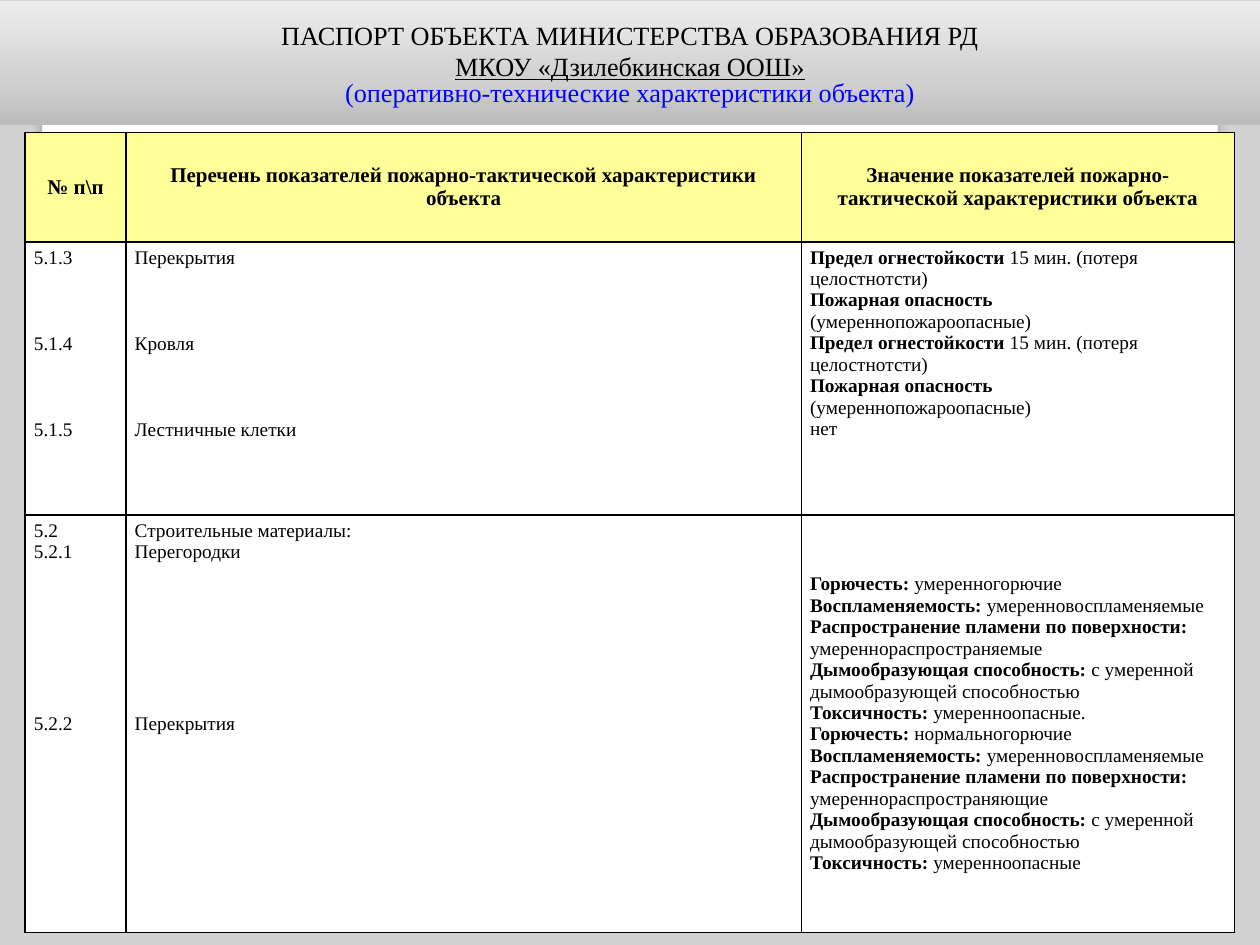
from lxml import etree
from pptx import Presentation
from pptx.dml.color import RGBColor
from pptx.enum.shapes import MSO_SHAPE
from pptx.enum.text import MSO_ANCHOR, PP_ALIGN
from pptx.oxml import parse_xml
from pptx.oxml.ns import nsdecls, qn
from pptx.util import Pt

RECTANGLE = MSO_SHAPE.RECTANGLE
ROUNDED = MSO_SHAPE.ROUNDED_RECTANGLE
MIDDLE, TOP = MSO_ANCHOR.MIDDLE, MSO_ANCHOR.TOP
CENTER, LEFT = PP_ALIGN.CENTER, PP_ALIGN.LEFT
FONT = "Times New Roman"
color = RGBColor.from_string


def fill_gradient(shape, stops, angle):
    shape.fill.gradient()
    shape.fill.gradient_angle = angle
    stop_list = shape._element.spPr.find(".//" + qn("a:gsLst"))
    for stop in list(stop_list):
        stop_list.remove(stop)
    for position, shade in stops:
        stop = etree.SubElement(stop_list, qn("a:gs"), pos=str(position * 1000))
        etree.SubElement(stop, qn("a:srgbClr"), val=shade)


def style_run(run, size, bold=False, shade="000000"):
    run.font.name = FONT
    run.font.size = Pt(size)
    run.font.bold = bold
    run.font.color.rgb = color(shade)


prs = Presentation()
prs.slide_width, prs.slide_height = Pt(720), Pt(540)
slide = prs.slides.add_slide(prs.slide_layouts[6])
slide.background.fill.solid()
slide.background.fill.fore_color.rgb = color("D2D2D2")

card = slide.shapes.add_shape(ROUNDED, Pt(24), Pt(26), Pt(672), Pt(488))
card.adjustments[0] = 0.02
fill_gradient(card, [(0, "FFFFFF"), (98, "FFFFFF"), (99, "F7F7F7"), (100, "DADADA")], 270)
card.line.color.rgb = color("A4A4A4")
card.line.width = Pt(0.16)
card._element.spPr.append(parse_xml(
    f'<a:effectLst {nsdecls("a")}><a:outerShdw blurRad="{Pt(6)}" dist="{Pt(4)}" dir="5400000">'
    '<a:srgbClr val="000000"><a:alpha val="25000"/></a:srgbClr></a:outerShdw></a:effectLst>'))

headings = ["№ п\\п",
            "Перечень показателей пожарно-тактической характеристики объекта",
            "Значение показателей пожарно-тактической характеристики объекта"]
fire_limits = [("Предел огнестойкости ", "15 мин. (потеря целостнотсти)"),
               ("Пожарная опасность", ""),
               ("", "(умереннопожароопасные)")]
materials = []
for burning, spreading, toxicity in [
        ("умеренногорючие", "умереннораспространяемые", "умеренноопасные."),
        ("нормальногорючие", "умереннораспространяющие", "умеренноопасные")]:
    materials += [("Горючесть:", " " + burning),
                  ("Воспламеняемость: ", "умеренновоспламеняемые"),
                  ("Распространение пламени по поверхности:", ""),
                  ("", spreading),
                  ("Дымообразующая способность: ", "с умеренной дымообразующей способностью"),
                  ("Токсичность:", " " + toxicity)]

rows = [
    [[(heading, "")] for heading in headings],
    [[("", number) for number in ("5.1.3", "5.1.4", "5.1.5")],
     [("", part) for part in ("Перекрытия", "Кровля", "Лестничные клетки")],
     fire_limits * 2 + [("", "нет")]],
    [[("", number) for number in ("5.2", "5.2.1", "5.2.2")],
     [("", part) for part in ("Строительные материалы:", "Перегородки", "Перекрытия")],
     materials],
]
item_gaps = [[0], [0, 36.9, 36.9], [0, 0, 86]]

table = slide.shapes.add_table(3, 3, Pt(14.4), Pt(75.6), Pt(691.2), Pt(457.2)).table
table.first_row = table.horz_banding = False
for column, width in zip(table.columns, (57.6, 385.9, 247.7)):
    column.width = Pt(width)
for row, height in zip(table.rows, (62.6, 156.2, 238.4)):
    row.height = Pt(height)

for r, row in enumerate(rows):
    for c, entries in enumerate(row):
        cell = table.cell(r, c)
        cell.margin_left = cell.margin_right = Pt(5)
        cell.margin_top = cell.margin_bottom = Pt(2.9)
        cell.vertical_anchor = MIDDLE if r == 0 or entries is materials else TOP
        for side in ("lnL", "lnR", "lnT", "lnB"):
            cell._tc.get_or_add_tcPr().append(parse_xml(
                f'<a:{side} {nsdecls("a")} w="{Pt(1)}"><a:solidFill>'
                f'<a:srgbClr val="000000"/></a:solidFill></a:{side}>'))
        cell.fill.solid()
        cell.fill.fore_color.rgb = color("FFFFFF" if r else "FFFF99")
        for i, (label, value) in enumerate(entries):
            paragraph = cell.text_frame.paragraphs[0] if i == 0 else cell.text_frame.add_paragraph()
            paragraph.alignment = LEFT if r else CENTER
            if c < 2:
                paragraph.space_before = Pt(item_gaps[r][i])
            for text, bold in ((label, True), (value, False)):
                if text:
                    run = paragraph.add_run()
                    run.text = text
                    style_run(run, 11 if r else 12, bold)

banner = slide.shapes.add_shape(RECTANGLE, Pt(0), Pt(0.7), Pt(720), Pt(70.6))
banner.shadow.inherit = False
fill_gradient(banner, [(0, "BCBCBC"), (35, "D0D0D0"), (100, "EDEDED")], 90)
banner.line.fill.background()
title = banner.text_frame
title.word_wrap = True
title.vertical_anchor = MIDDLE
title.text = ("ПАСПОРТ ОБЪЕКТА МИНИСТЕРСТВА ОБРАЗОВАНИЯ РД\n"
              "МКОУ «Дзилебкинская ООШ»\n"
              "(оперативно-технические характеристики объекта)")
for paragraph, shade in zip(title.paragraphs, ("000000", "000000", "0000FF")):
    paragraph.alignment = CENTER
    style_run(paragraph.runs[0], 15, shade=shade)
title.paragraphs[1].runs[0].font.underline = True
title.paragraphs[2].line_spacing = 0.8

prs.save("out.pptx")
